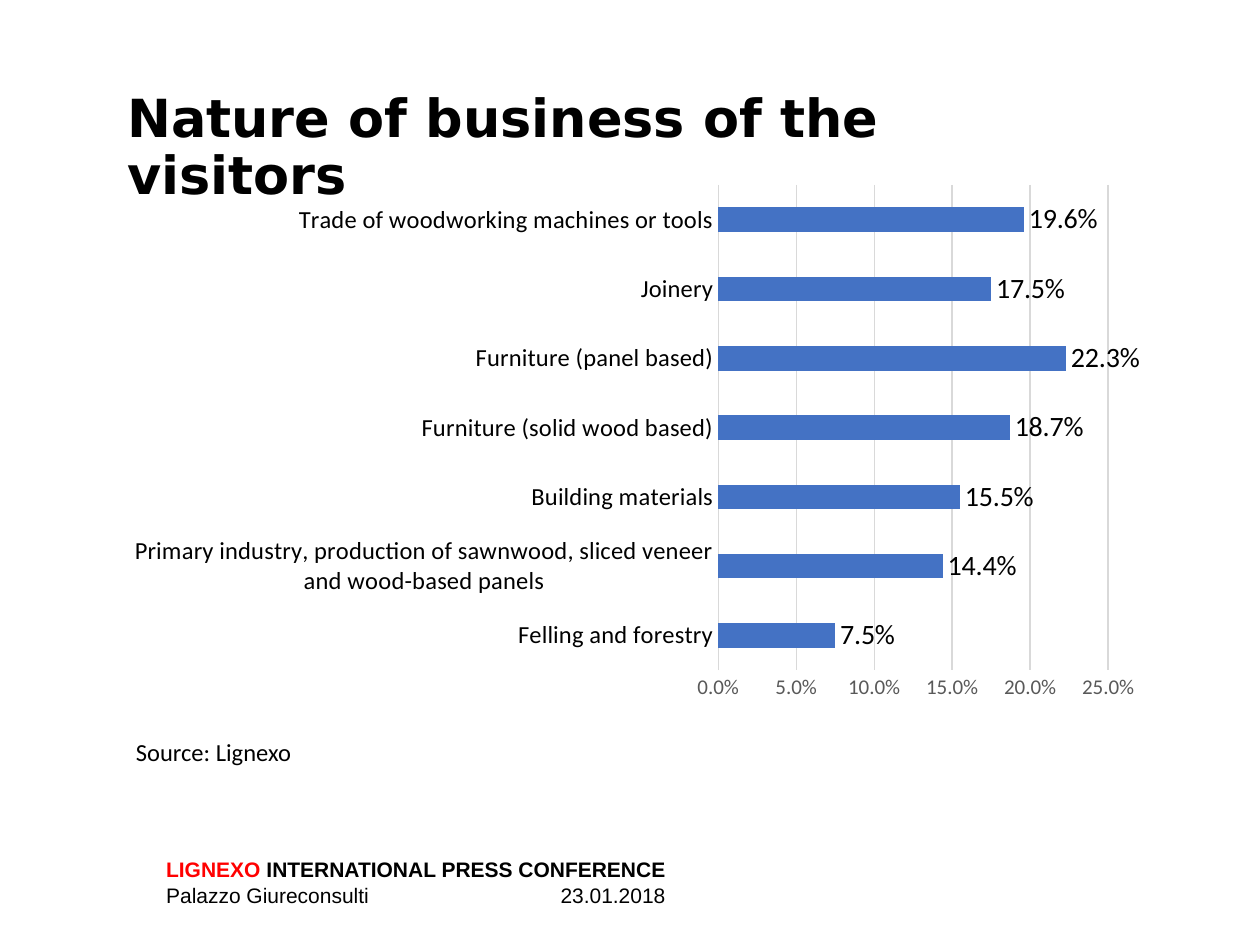
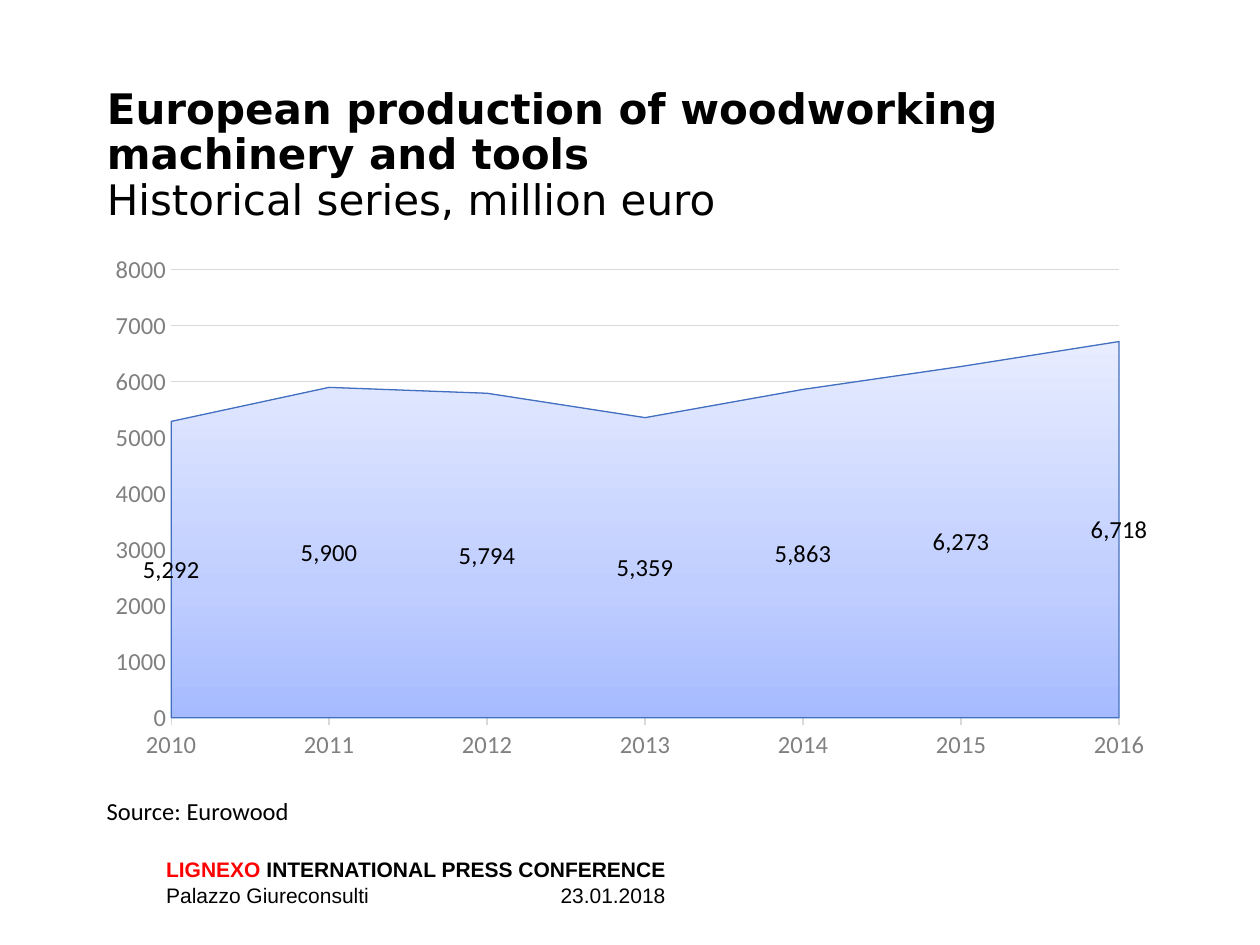
from lxml import etree
from pptx import Presentation
from pptx.chart.data import CategoryChartData
from pptx.dml.color import RGBColor
from pptx.enum.chart import XL_CHART_TYPE, XL_LABEL_POSITION, XL_TICK_MARK
from pptx.enum.text import MSO_ANCHOR, MSO_AUTO_SIZE, PP_ALIGN
from pptx.oxml import parse_xml
from pptx.oxml.ns import nsdecls, qn
from pptx.util import Cm, Pt

BLACK = RGBColor(0x00, 0x00, 0x00)
RED = RGBColor(0xFF, 0x00, 0x00)
DARK_GRAY = RGBColor(0x59, 0x59, 0x59)
GRAY = RGBColor(0x80, 0x80, 0x80)
GRID_GRAY = RGBColor(0xD9, 0xD9, 0xD9)
BAR_BLUE = RGBColor(0x44, 0x72, 0xC4)
OUTLINE_BLUE = RGBColor(0x43, 0x6F, 0xC0)
AREA_STOPS = [
    (0, RGBColor(0xA6, 0xBB, 0xFF)),
    (35, RGBColor(0xC0, 0xCE, 0xFF)),
    (100, RGBColor(0xE7, 0xEC, 0xFF)),
]

TITLE_FONT = "DejaVu Sans"
BODY_FONT = "Calibri"
FOOTER_FONT = "Arial"
TITLE_ONLY = 5

BUSINESS_SHARES = {
    "Felling and forestry": 0.075,
    "Primary industry, production of sawnwood, sliced veneer and wood-based panels": 0.144,
    "Building materials": 0.155,
    "Furniture (solid wood based)": 0.187,
    "Furniture (panel based)": 0.223,
    "Joinery": 0.175,
    "Trade of woodworking machines or tools": 0.196,
}
PRODUCTION = {
    "2010": 5292, "2011": 5900, "2012": 5794, "2013": 5359,
    "2014": 5863, "2015": 6273, "2016": 6718,
}


def style_font(font, name, size, color=BLACK, bold=False):
    font.name = name
    font.size = Pt(size)
    font.bold = bold
    font.color.rgb = color


def style_line(line, color):
    line.color.rgb = color
    line.width = Pt(0.75)


class Deck:
    """Holds the shared style and the current slide."""

    def __init__(self):
        self.presentation = Presentation()
        self.presentation.slide_width = Cm(25.4)
        self.presentation.slide_height = Cm(19.05)
        self.slide = None

    def add_slide(self):
        layout = self.presentation.slide_layouts[TITLE_ONLY]
        self.slide = self.presentation.slides.add_slide(layout)
        self.add_footer()

    def add_title(self, box, size, heading, subtitle=""):
        title = self.slide.shapes.title
        title.left, title.top, title.width, title.height = map(Cm, box)
        frame = title.text_frame
        frame.text = f"{heading}\v{subtitle}" if subtitle else heading
        frame.word_wrap = True
        frame.auto_size = MSO_AUTO_SIZE.NONE
        frame.vertical_anchor = MSO_ANCHOR.TOP
        paragraph = frame.paragraphs[0]
        paragraph.alignment = PP_ALIGN.LEFT
        paragraph.line_spacing = 0.9
        for run in paragraph.runs:
            style_font(run.font, TITLE_FONT, size, bold=run.text == heading)

    def add_text(self, box, text):
        shape = self.slide.shapes.add_textbox(*map(Cm, box))
        frame = shape.text_frame
        frame.word_wrap = True
        frame.text = text
        for paragraph in frame.paragraphs:
            style_font(paragraph.font, BODY_FONT, 14)
        return frame

    def add_footer(self):
        frame = self.add_text((3.1, 17.15, 11.81, 1.3), "\nPalazzo Giureconsulti\t23.01.2018")
        event, venue = frame.paragraphs
        for text, color in (("LIGNEXO", RED), (" INTERNATIONAL PRESS CONFERENCE", BLACK)):
            run = event.add_run()
            run.text = text
            style_font(run.font, FOOTER_FONT, 12, color, bold=True)
        # The date stands at a tab stop
        tabs = etree.Element(qn("a:tabLst"))
        etree.SubElement(tabs, qn("a:tab"), pos=str(Cm(7.95)), algn="l")
        venue._p.get_or_add_pPr().insert(0, tabs)
        for run in venue.runs:
            style_font(run.font, FOOTER_FONT, 12)

    def add_chart(self, kind, box, plot_box, values, number_format):
        data = CategoryChartData(number_format=number_format)
        data.categories = list(values)
        data.add_series("Series 1", list(values.values()))
        chart = self.slide.shapes.add_chart(kind, *map(Cm, box), data).chart
        chart.has_legend = False
        chart.has_title = False
        style_font(chart.font, BODY_FONT, 10)
        self.place_plot(chart, box, plot_box)
        return chart

    def place_plot(self, chart, box, plot_box):
        left, top, width, height = box
        plot_left, plot_top, plot_width, plot_height = plot_box
        fractions = {
            "x": (plot_left - left) / width,
            "y": (plot_top - top) / height,
            "w": plot_width / width,
            "h": plot_height / height,
        }
        plot_area = chart._chartSpace.find(".//" + qn("c:plotArea"))
        for layout in plot_area.findall(qn("c:layout")):
            plot_area.remove(layout)
        layout = etree.Element(qn("c:layout"))
        manual = etree.SubElement(layout, qn("c:manualLayout"))
        etree.SubElement(manual, qn("c:layoutTarget"), val="inner")
        for side in "xy":
            etree.SubElement(manual, qn(f"c:{side}Mode"), val="edge")
        for side, fraction in fractions.items():
            etree.SubElement(manual, qn(f"c:{side}"), val=f"{fraction:.4f}")
        plot_area.insert(0, layout)

    def style_category_axis(self, chart, size, color, tick_mark):
        axis = chart.category_axis
        axis.has_major_gridlines = False
        axis.major_tick_mark = tick_mark
        axis.minor_tick_mark = XL_TICK_MARK.NONE
        style_line(axis.format.line, GRID_GRAY)
        style_font(axis.tick_labels.font, BODY_FONT, size, color)

    def style_value_axis(self, chart, size, color, maximum, step, number_format):
        axis = chart.value_axis
        axis.minimum_scale, axis.maximum_scale, axis.major_unit = 0, maximum, step
        axis.major_tick_mark = axis.minor_tick_mark = XL_TICK_MARK.NONE
        axis.has_major_gridlines = True
        style_line(axis.major_gridlines.format.line, GRID_GRAY)
        axis.format.line.fill.background()
        labels = axis.tick_labels
        labels.number_format = number_format
        labels.number_format_is_linked = False
        style_font(labels.font, BODY_FONT, size, color)

    def label_series(self, series, size, number_format):
        labels = series.data_labels
        labels.show_value = True
        labels.number_format = number_format
        labels.number_format_is_linked = False
        style_font(labels.font, BODY_FONT, size)
        return labels

    def add_bar_chart(self, box, plot_box, values):
        percent = "0.0%"
        chart = self.add_chart(XL_CHART_TYPE.BAR_CLUSTERED, box, plot_box, values, percent)
        self.style_category_axis(chart, 14, BLACK, XL_TICK_MARK.NONE)
        self.style_value_axis(chart, 12, DARK_GRAY, 0.25, 0.05, percent)
        plot = chart.plots[0]
        plot.gap_width = 182
        plot.vary_by_categories = False
        series = plot.series[0]
        series.format.fill.solid()
        series.format.fill.fore_color.rgb = BAR_BLUE
        self.label_series(series, 16, percent).position = XL_LABEL_POSITION.OUTSIDE_END

    def add_area_chart(self, box, plot_box, values):
        chart = self.add_chart(XL_CHART_TYPE.AREA_STACKED, box, plot_box, values, "General")
        self.style_category_axis(chart, 14, GRAY, XL_TICK_MARK.OUTSIDE)
        self.style_value_axis(chart, 14, GRAY, 8000, 1000, "General")
        chart._chartSpace.find(".//" + qn("c:crossBetween")).set("val", "midCat")
        plot = chart.plots[0]
        plot.vary_by_categories = False
        series = plot.series[0]
        series.format.fill.gradient()
        style_line(series.format.line, OUTLINE_BLUE)
        # Three-stop gradient, rising from the base line
        stops = "".join(
            f'<a:gs pos="{position * 1000}"><a:srgbClr val="{color}"/></a:gs>'
            for position, color in AREA_STOPS
        )
        gradient = parse_xml(
            f'<a:gradFill {nsdecls("a")} rotWithShape="1"><a:gsLst>{stops}</a:gsLst>'
            '<a:lin ang="16200000" scaled="1"/></a:gradFill>'
        )
        old_gradient = series._element.find(".//" + qn("a:gradFill"))
        old_gradient.getparent().replace(old_gradient, gradient)
        self.label_series(series, 14, "#,##0")


def main():
    deck = Deck()

    # Visitors by business
    deck.add_slide()
    deck.add_title((2.31, 1.73, 20.4, 3.68), 30, "Nature of business of the visitors")
    deck.add_bar_chart((2.31, 3.53, 21, 10.8), (14.48, 3.73, 7.86, 9.78), BUSINESS_SHARES)
    deck.add_text((2.49, 14.73, 5.79, 0.86), "Source: Lignexo")

    # Production over the years
    deck.add_slide()
    deck.add_title(
        (1.9, 1.65, 21.8, 3.07), 24,
        "European production of woodworking machinery and tools",
        "Historical series, million euro",
    )
    deck.add_area_chart((1.9, 4.93, 21.6, 10.64), (3.45, 5.44, 19.11, 9.03), PRODUCTION)
    deck.add_text((1.9, 15.93, 5.79, 0.86), "Source: Eurowood")

    deck.presentation.save("out.pptx")


if __name__ == "__main__":
    main()
